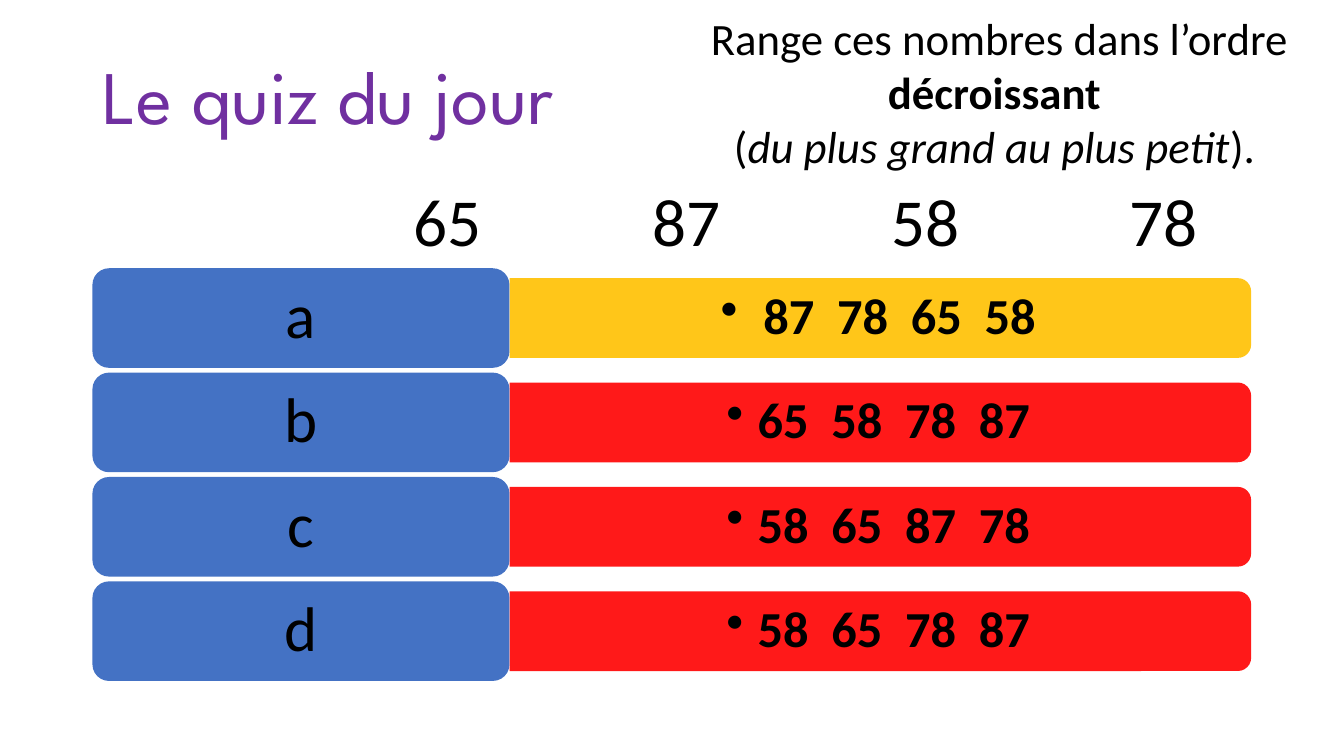
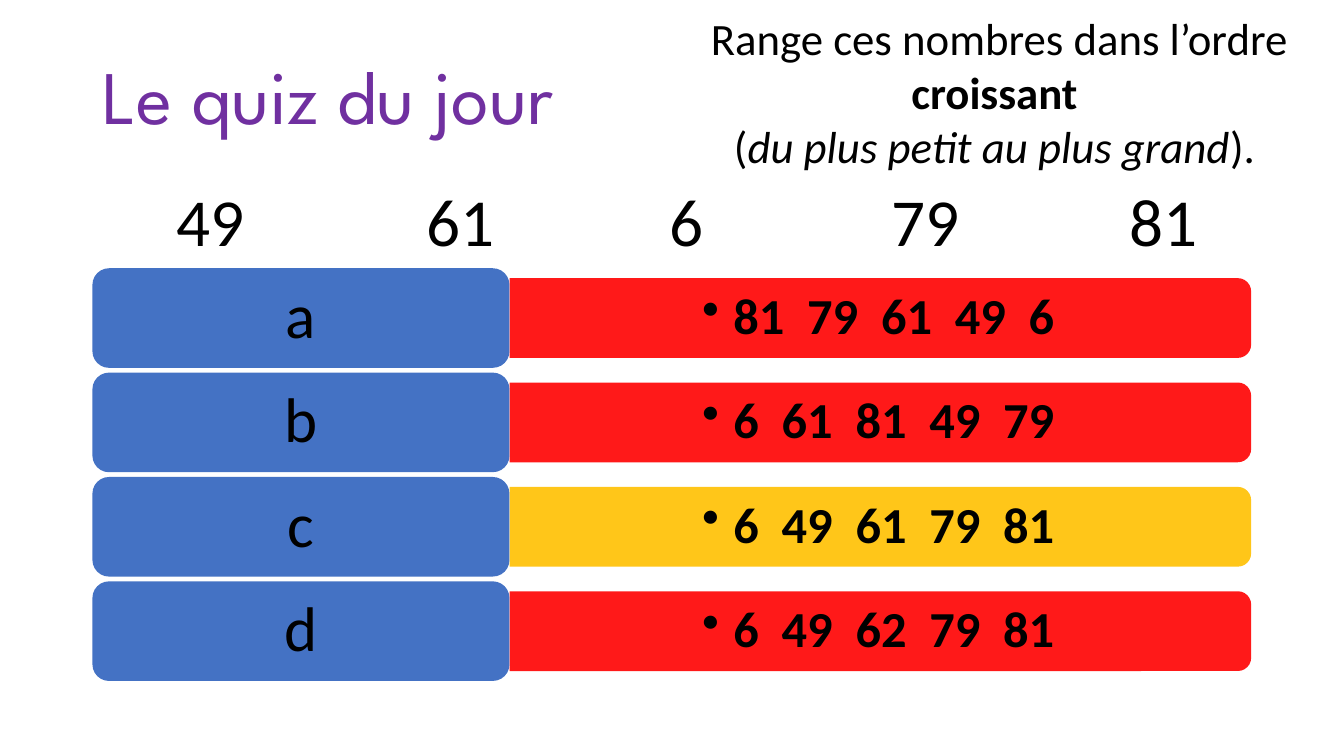
"""Build the two slides of a daily number-ordering quiz."""

from dataclasses import dataclass

from lxml.etree import SubElement
from pptx import Presentation
from pptx.dml.color import RGBColor
from pptx.enum.shapes import MSO_SHAPE
from pptx.enum.text import MSO_ANCHOR, MSO_AUTO_SIZE, PP_ALIGN
from pptx.oxml.ns import qn
from pptx.shapes.autoshape import Shape
from pptx.slide import Slide
from pptx.text.text import TextFrame, _Paragraph, _Run
from pptx.util import Cm, Pt

ROUNDED = MSO_SHAPE.ROUNDED_RECTANGLE
ROUNDED_END = MSO_SHAPE.ROUND_2_SAME_RECTANGLE
MIDDLE = MSO_ANCHOR.MIDDLE
LEFT = PP_ALIGN.LEFT
CENTER = PP_ALIGN.CENTER
NO_FIT = MSO_AUTO_SIZE.NONE
GROW = MSO_AUTO_SIZE.SHAPE_TO_FIT_TEXT

TITLE_FONT = "League Spartan"
BODY_FONT = "Calibri"
PURPLE = "7030A0"
BLACK = "000000"
BLUE = "4472C4"
RIGHT_COLOUR = "FFC000"
WRONG_COLOUR = "FF0000"

TITLE_ONLY = 5
LETTERS = "abcd"
ROW_TOP, ROW_HEIGHT, ROW_PITCH = 6.76, 2.51, 2.63
LABEL_LEFT, LABEL_WIDTH = 2.33, 10.51
BAR_LEFT, BAR_LENGTH, BAR_THICKNESS = LABEL_LEFT + LABEL_WIDTH, 18.69, 2.01
ANSWER_WIDTH, ANSWER_HEIGHT = 18.59, 1.8
NUMBER_TOP, NUMBER_WIDTH, NUMBER_HEIGHT = 4.39, 2.79, 2.31


@dataclass(frozen=True)
class Box:
    """A rectangle measured in centimetres."""

    left: float
    top: float
    width: float
    height: float

    def lengths(self) -> tuple[Cm, Cm, Cm, Cm]:
        """Return the rectangle as slide lengths."""
        return Cm(self.left), Cm(self.top), Cm(self.width), Cm(self.height)


@dataclass(frozen=True)
class Number:
    """A number to sort and the left edge of its box."""

    text: str
    left: float


@dataclass(frozen=True)
class Quiz:
    """The content of one quiz slide."""

    order: str
    hint: str
    numbers: tuple[Number, ...]
    answers: tuple[str, ...]
    right_letter: str


TITLE_BOX = Box(2.33, 0.69, 29.21, 3.68)
QUESTION_BOX = Box(17.25, 0.15, 15.88, 4.37)

QUIZZES = (
    Quiz(
        "décroissant",
        "du plus grand au plus petit",
        (Number("65", 9.88), Number("87", 15.9), Number("58", 21.92), Number("78", 27.94)),
        (" 87  78  65  58", "65  58  78  87", "58  65  87  78", "58  65  78  87"),
        "a",
    ),
    Quiz(
        "croissant",
        "du plus petit au plus grand",
        (
            Number("49", 3.91),
            Number("61", 10.21),
            Number("6", 15.9),
            Number("79", 21.92),
            Number("81", 27.94),
        ),
        ("81  79  61  49  6", "6  61  81  49  79", "6  49  61  79  81", "6  49  62  79  81"),
        "c",
    ),
)


def colour(value: str) -> RGBColor:
    """Convert a hex string to a colour."""
    return RGBColor.from_string(value)


def format_run(run: _Run, size: float, font: str = BODY_FONT, ink: str = BLACK,
               bold: bool = False, italic: bool = False) -> None:
    """Set the character format of a run."""
    run.font.name = font
    run.font.size = Pt(size)
    run.font.color.rgb = colour(ink)
    run.font.bold = bold
    run.font.italic = italic


def set_margins(frame: TextFrame, horizontal: float, vertical: float) -> None:
    """Set equal opposite margins in centimetres."""
    frame.margin_left = frame.margin_right = Cm(horizontal)
    frame.margin_top = frame.margin_bottom = Cm(vertical)


def add_block(slide: Slide, kind: MSO_SHAPE, box: Box, fill: str) -> Shape:
    """Add a filled shape without outline or shadow."""
    shape = slide.shapes.add_shape(kind, *box.lengths())
    shape.shadow.inherit = False
    shape.fill.solid()
    shape.fill.fore_color.rgb = colour(fill)
    shape.line.fill.background()
    return shape


def add_text_box(slide: Slide, box: Box) -> TextFrame:
    """Add a wrapping text box and return its frame."""
    frame = slide.shapes.add_textbox(*box.lengths()).text_frame
    frame.word_wrap = True
    return frame


def add_bullet(paragraph: _Paragraph) -> None:
    """Give a paragraph a hanging round bullet."""
    properties = paragraph._p.get_or_add_pPr()
    properties.set("marL", str(Cm(0.79)))
    properties.set("indent", str(Cm(-0.79)))
    SubElement(properties, qn("a:buChar")).set("char", "•")


def add_title(slide: Slide) -> None:
    """Place and format the slide title."""
    title = slide.shapes.title
    title.left, title.top, title.width, title.height = TITLE_BOX.lengths()
    frame = title.text_frame
    frame.text = "Le quiz du jour"
    frame.auto_size = NO_FIT
    frame.vertical_anchor = MIDDLE
    paragraph = frame.paragraphs[0]
    paragraph.alignment = LEFT
    paragraph.line_spacing = 0.9
    format_run(paragraph.runs[0], 54, TITLE_FONT, PURPLE)


def add_label(slide: Slide, letter: str, top: float) -> None:
    """Add the lettered block of an answer row."""
    shape = add_block(slide, ROUNDED, Box(LABEL_LEFT, top, LABEL_WIDTH, ROW_HEIGHT), BLUE)
    frame = shape.text_frame
    frame.text = letter
    frame.vertical_anchor = MIDDLE
    set_margins(frame, 0.6, 0.36)
    paragraph = frame.paragraphs[0]
    paragraph.alignment = CENTER
    paragraph.line_spacing = 0.9
    format_run(paragraph.runs[0], 45)


def add_bar(slide: Slide, middle: float, fill: str) -> None:
    """Add a translucent answer bar rounded at its right end."""
    box = Box(
        BAR_LEFT + (BAR_LENGTH - BAR_THICKNESS) / 2,
        middle - BAR_LENGTH / 2,
        BAR_THICKNESS,
        BAR_LENGTH,
    )
    bar = add_block(slide, ROUNDED_END, box, fill)
    bar.rotation = 90
    fill_colour = bar.element.spPr.find(f"{qn('a:solidFill')}/{qn('a:srgbClr')}")
    SubElement(fill_colour, qn("a:alpha")).set("val", "90000")


def add_answer(slide: Slide, answer: str, middle: float) -> None:
    """Add the bulleted text of an answer."""
    box = Box(BAR_LEFT, middle - ANSWER_HEIGHT / 2, ANSWER_WIDTH, ANSWER_HEIGHT)
    frame = add_text_box(slide, box)
    frame.text = answer
    frame.vertical_anchor = MIDDLE
    set_margins(frame, 0.38, 0.18)
    paragraph = frame.paragraphs[0]
    paragraph.level = 1
    paragraph.alignment = CENTER
    paragraph.line_spacing = 0.9
    add_bullet(paragraph)
    format_run(paragraph.runs[0], 36, bold=True)


def add_number(slide: Slide, number: Number) -> None:
    """Add one of the numbers to sort."""
    frame = add_text_box(slide, Box(number.left, NUMBER_TOP, NUMBER_WIDTH, NUMBER_HEIGHT))
    frame.text = number.text
    frame.auto_size = GROW
    paragraph = frame.paragraphs[0]
    paragraph.alignment = CENTER
    format_run(paragraph.runs[0], 48)


def add_question(slide: Slide, quiz: Quiz) -> None:
    """Add the instruction with its order and hint emphasised."""
    frame = add_text_box(slide, QUESTION_BOX)
    frame.auto_size = GROW
    lines = (
        (("Range ces nombres dans l’ordre ", False, False), (f"{quiz.order} ", True, False)),
        (("(", False, False), (quiz.hint, False, True), ("). ", False, False)),
    )
    for paragraph, pieces in zip((frame.paragraphs[0], frame.add_paragraph()), lines):
        paragraph.alignment = CENTER
        for text, bold, italic in pieces:
            run = paragraph.add_run()
            run.text = text
            format_run(run, 32, bold=bold, italic=italic)


def add_quiz(presentation: Presentation, quiz: Quiz) -> None:
    """Add a complete quiz slide."""
    slide = presentation.slides.add_slide(presentation.slide_layouts[TITLE_ONLY])
    add_title(slide)
    for index, (letter, answer) in enumerate(zip(LETTERS, quiz.answers)):
        top = ROW_TOP + index * ROW_PITCH
        middle = top + ROW_HEIGHT / 2
        add_bar(slide, middle, RIGHT_COLOUR if letter == quiz.right_letter else WRONG_COLOUR)
        add_answer(slide, answer, middle)
        add_label(slide, letter, top)
    for number in quiz.numbers:
        add_number(slide, number)
    add_question(slide, quiz)


def main() -> None:
    """Build and save the presentation."""
    presentation = Presentation()
    presentation.slide_width = Cm(33.87)
    presentation.slide_height = Cm(19.05)
    for quiz in QUIZZES:
        add_quiz(presentation, quiz)
    presentation.save("out.pptx")


if __name__ == "__main__":
    main()
